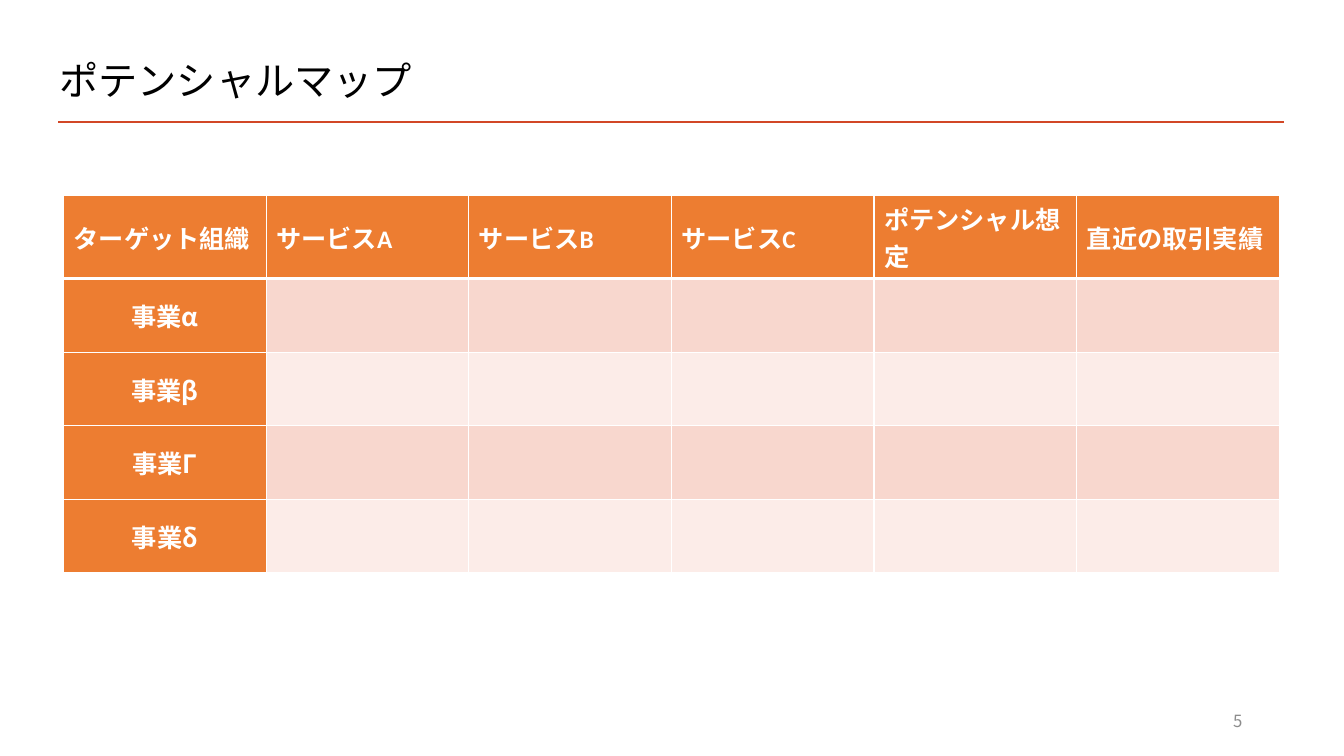
from lxml.etree import SubElement
from pptx import Presentation
from pptx.dml.color import RGBColor
from pptx.enum.shapes import MSO_CONNECTOR as Connector
from pptx.enum.text import MSO_ANCHOR as Anchor, PP_ALIGN as Align
from pptx.oxml.ns import qn
from pptx.util import Inches, Pt

BLACK = RGBColor(0x00, 0x00, 0x00)
WHITE = RGBColor(0xFF, 0xFF, 0xFF)
GRAY = RGBColor(0x8C, 0x8C, 0x8C)
RED = RGBColor(0xD2, 0x47, 0x26)
ORANGE = RGBColor(0xED, 0x7D, 0x31)
BANDS = (RGBColor(0xF8, 0xD7, 0xCE), RGBColor(0xFC, 0xEC, 0xE8))

JAPANESE = "Noto Sans CJK JP"
TITLE_ONLY = 5
HEADERS = ("ターゲット組織", "サービスA", "サービスB", "サービスC", "ポテンシャル想定", "直近の取引実績")
BUSINESSES = ("事業α", "事業β", "事業Γ", "事業δ")


def assign(target, values):
    for name, value in values.items():
        setattr(target, name, value)


class SlideBuilder:
    unit = Inches(0.1)

    def __init__(self, presentation):
        self.slide = presentation.slides.add_slide(presentation.slide_layouts[TITLE_ONLY])

    def grid(self, *cells):
        return [round(cell * self.unit) for cell in cells]

    def add_text(self, frame, text, size, color, align=Align.LEFT, name=JAPANESE, bold=False):
        paragraph = frame.paragraphs[0]
        paragraph.alignment = align
        run = paragraph.add_run()
        run.text = text
        assign(run.font, {"size": Pt(size), "name": name, "bold": bold})
        run.font.color.rgb = color
        SubElement(run.font._element, qn("a:ea"), typeface=JAPANESE)
        return paragraph

    def title(self, text, *box):
        shape = self.slide.shapes.title
        assign(shape, dict(zip(("left", "top", "width", "height"), self.grid(*box))))
        assign(shape.text_frame, {"word_wrap": True, "vertical_anchor": Anchor.MIDDLE})
        self.add_text(shape.text_frame, text, 28, BLACK).line_spacing = 0.9

    def rule(self, left, right, top):
        line = self.slide.shapes.add_connector(Connector.STRAIGHT, *self.grid(left, top, right, top))
        line.line.color.rgb = RED
        line.line.width = Pt(2)
        SubElement(line._element.spPr, qn("a:effectLst"))

    def page_number(self, text, *box):
        shape = self.slide.shapes.add_textbox(*self.grid(*box))
        assign(shape.text_frame, {"word_wrap": True, "vertical_anchor": Anchor.MIDDLE})
        self.add_text(shape.text_frame, text, 12, GRAY, Align.RIGHT)

    def paint(self, cell, color, bottom=1):
        properties = cell._tc.get_or_add_tcPr()
        for side, width in {"L": 1, "R": 1, "T": 1, "B": bottom}.items():
            border = SubElement(properties, qn(f"a:ln{side}"), w=str(int(Pt(width))))
            SubElement(SubElement(border, qn("a:solidFill")), qn("a:srgbClr"), val=str(WHITE))
        cell.fill.solid()
        cell.fill.fore_color.rgb = color
        cell.vertical_anchor = Anchor.MIDDLE

    def potential_map(self, left, top, column_width, header_height, row_height):
        columns, rows = len(HEADERS), len(BUSINESSES)
        box = self.grid(left, top, column_width * columns, header_height + row_height * rows)
        table = self.slide.shapes.add_table(rows + 1, columns, *box).table
        assign(table, {"first_row": True, "horz_banding": False})
        for row, height in zip(table.rows, [header_height] + [row_height] * rows):
            row.height = self.grid(height)[0]
        for cell, header in zip(table.rows[0].cells, HEADERS):
            self.paint(cell, ORANGE, bottom=3)
            self.add_text(cell.text_frame, header, 18, WHITE, name="Calibri", bold=True)
        for index, business in enumerate(BUSINESSES):
            label, *values = table.rows[index + 1].cells
            self.paint(label, ORANGE)
            self.add_text(label.text_frame, business, 18, WHITE, Align.CENTER, bold=True)
            for cell in values:
                self.paint(cell, BANDS[index % 2])


def main():
    presentation = Presentation()
    assign(presentation, {"slide_width": Inches(13.33), "slide_height": Inches(7.5)})
    builder = SlideBuilder(presentation)
    builder.rule(5.8, 127.4, 12.1)
    builder.title("ポテンシャルマップ", 4.9, 4.7, 100, 7)
    builder.potential_map(6.3, 19.4, 20.1, 6.7, 7.3)
    builder.page_number("5", 94.2, 69.5, 30, 4)
    presentation.save("out.pptx")


if __name__ == "__main__":
    main()
